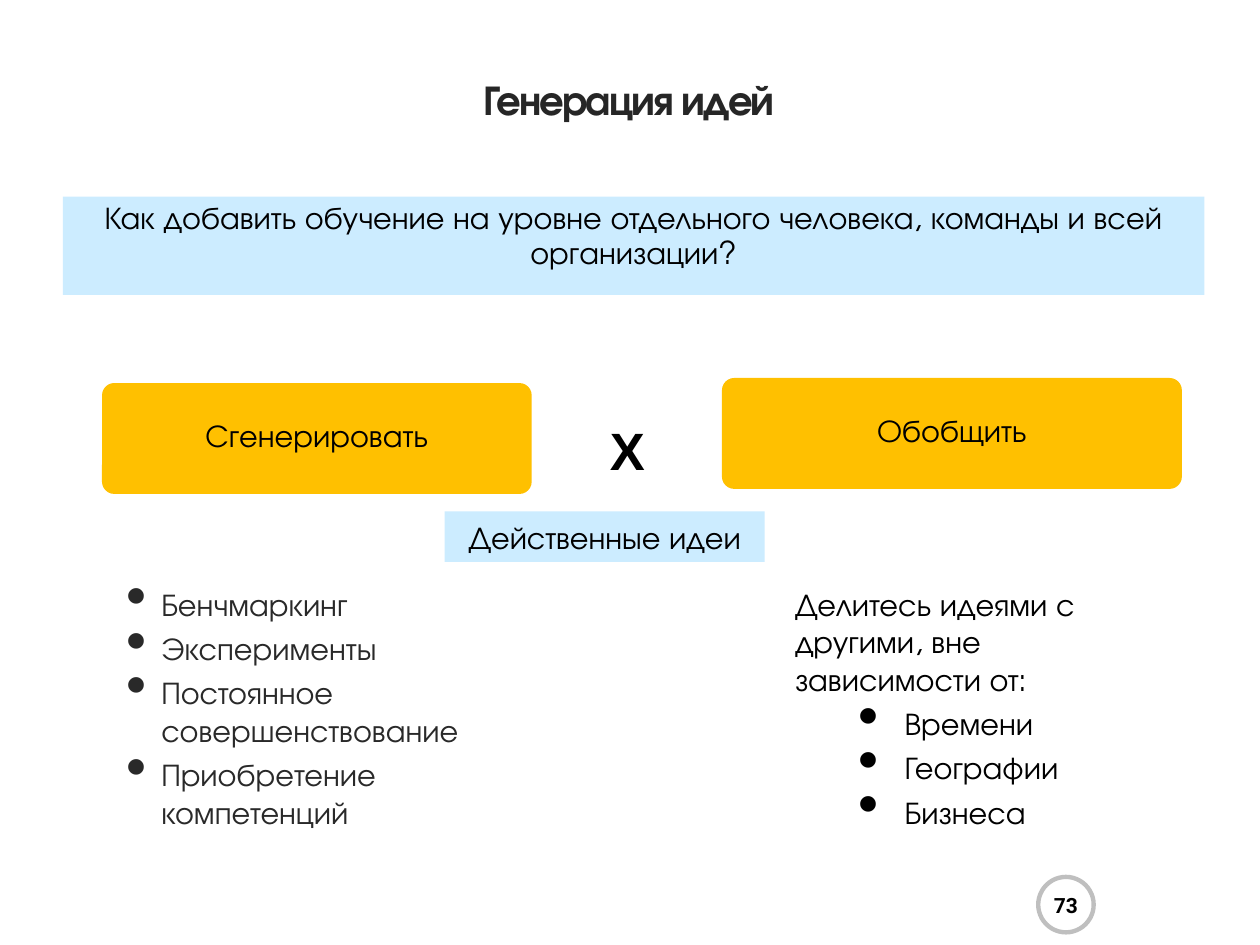
"""Build the slide on generating and sharing ideas."""
from dataclasses import dataclass

import lxml.etree
import pptx
import pptx.dml.color
import pptx.enum.shapes
import pptx.enum.text
import pptx.oxml.ns
import pptx.util

CELL = pptx.util.Inches(0.1)
COLS, ROWS = 100, 75
SANS = "TeX Gyre Adventor"
KIND = pptx.enum.shapes.MSO_SHAPE
ALIGN = pptx.enum.text.PP_ALIGN
ANCHOR = pptx.enum.text.MSO_ANCHOR
TOP, MID = ANCHOR.TOP, ANCHOR.MIDDLE


@dataclass(frozen=True)
class Area:
    """A place on the grid, in columns and rows."""
    col: float
    row: float
    wide: float
    high: float


@dataclass(frozen=True)
class Style:
    """The look of a paragraph."""
    color: str = "000000"
    size: float = 18
    face: str = SANS
    bold: bool = False
    align: ALIGN = ALIGN.CENTER


@dataclass(frozen=True)
class Panel:
    """A filled shape with one centred text."""
    kind: KIND
    area: Area
    fill: str
    text: str
    style: Style = Style()
    anchor: ANCHOR = MID
    inset: tuple = (0.4, 0, 0.4, 0.5)
    line: str = ""
    space: float = 1
    wrap: bool = True


@dataclass(frozen=True)
class Item:
    """A list entry, with a bullet when its hanging indent is not zero."""
    text: str
    left: float = 0
    hang: float = 0
    level: int = 0


def paint(hue: str) -> pptx.dml.color.RGBColor:
    """Turn a hex string into a colour."""
    return pptx.dml.color.RGBColor.from_string(hue)


def span(cells: float) -> int:
    """Turn grid cells into a length."""
    return round(cells * CELL)


def place(area: Area) -> tuple:
    """Give left, top, width and height of an area."""
    return tuple(map(span, (area.col, area.row, area.wide, area.high)))


def dress(para, text: str, style: Style) -> None:
    """Write a paragraph and set its look."""
    para.text = text
    para.alignment = style.align
    font = para.font
    font.name, font.size, font.bold = style.face, pptx.util.Pt(style.size), style.bold
    font.color.rgb = paint(style.color)


def frame(shape, inset: tuple, anchor: ANCHOR, wrap: bool = True):
    """Set the margins, anchor and wrap of a text frame."""
    body = shape.text_frame
    body.word_wrap = wrap
    body.auto_size = pptx.enum.text.MSO_AUTO_SIZE.NONE
    body.vertical_anchor = anchor
    (body.margin_left, body.margin_top,
     body.margin_right, body.margin_bottom) = map(span, inset)
    return body


def head(slide, text: str) -> None:
    """Place and format the title."""
    title = slide.shapes.title
    title.left, title.top, title.width, title.height = place(Area(7.2, 4.2, 85.5, 7.8))
    para = frame(title, (1, 0.5, 1, 0.5), MID).paragraphs[0]
    dress(para, text, Style("262626", 24, bold=True))
    para.line_spacing = pptx.util.Pt(25.1)
    para.runs[0]._r.get_or_add_rPr().set("spc", "-110")


def draw(slide, panel: Panel) -> None:
    """Draw a filled panel."""
    shape = slide.shapes.add_shape(panel.kind, *place(panel.area))
    shape.shadow.inherit = False
    shape.fill.solid()
    shape.fill.fore_color.rgb = paint(panel.fill)
    if panel.line:
        shape.line.color.rgb = paint(panel.line)
        shape.line.width = pptx.util.Pt(2.5)
    else:
        shape.line.fill.background()
    if panel.kind == KIND.ROUNDED_RECTANGLE:
        shape.adjustments[0] = 0.11
    para = frame(shape, panel.inset, panel.anchor, panel.wrap).paragraphs[0]
    dress(para, panel.text, panel.style)
    para.line_spacing = panel.space


def mark(para, item: Item) -> None:
    """Give a paragraph a large round bullet and a hanging indent."""
    props = para._p.get_or_add_pPr()
    props.set("marL", str(span(item.left)))
    props.set("indent", str(-span(item.hang)))
    for tag, key, value in (("a:buSzPct", "val", "190000"), ("a:buChar", "char", "•")):
        lxml.etree.SubElement(props, pptx.oxml.ns.qn(tag)).set(key, value)


def write(slide, area: Area, items: list, style: Style) -> None:
    """Write a list of items in a text box."""
    box = slide.shapes.add_textbox(*place(area))
    body = frame(box, (0, 0.4, 0, 0.4), TOP)
    for rank, item in enumerate(items):
        para = body.add_paragraph() if rank else body.paragraphs[0]
        para.level = item.level
        if item.hang:
            mark(para, item)
        dress(para, item.text, style)
        if rank:
            para.space_before = pptx.util.Pt(3.6)


def main() -> None:
    """Build and save the slide."""
    deck = pptx.Presentation()
    deck.slide_width, deck.slide_height = COLS * CELL, ROWS * CELL
    slide = deck.slides.add_slide(deck.slide_layouts[5])
    head(slide, "Генерация идей")

    sky, gold = "CCECFF", "FFC000"
    rect, rounded = KIND.RECTANGLE, KIND.ROUNDED_RECTANGLE
    panels = [
        Panel(KIND.OVAL, Area(82.4, 69.6, 4.4, 4.4), "FFFFFF", "73",
              Style(size=12, face="Roboto", bold=True), inset=(0, 0, 0, 0),
              line="BFBFBF", wrap=False),
        Panel(rounded, Area(8.1, 30.4, 34.1, 8.8), gold, "Сгенерировать"),
        Panel(rounded, Area(57.3, 30, 36.5, 8.8), gold, "Обобщить"),
        Panel(rect, Area(35.3, 40.6, 25.4, 4), sky, "Действенные идеи",
              inset=(0.4, 0.5, 0.4, 0.5), wrap=False),
        Panel(rect, Area(5, 15.6, 90.6, 7.8), sky,
              "Как добавить обучение на уровне отдельного человека, "
              "команды и всей организации?",
              anchor=TOP, inset=(1, 0.5, 1, 0.5), space=0.9),
    ]
    for panel in panels:
        draw(slide, panel)

    cross = slide.shapes.add_textbox(*place(Area(48, 32.7, 3.6, 6.1)))
    dress(frame(cross, (0.4, 0.5, 0.4, 0.5), TOP, False).paragraphs[0], "X",
          Style(size=30, face="Arial", bold=True))

    ways = ("Бенчмаркинг", "Эксперименты", "Постоянное совершенствование",
            "Приобретение компетенций")
    write(slide, Area(10, 46, 30.9, 20.8), [Item(way, 2.8, 2.8) for way in ways],
          Style("292929", align=ALIGN.LEFT))
    bounds = ("Времени", "Географии", "Бизнеса")
    write(slide, Area(63.1, 46, 26.9, 24.4),
          [Item("Делитесь идеями с другими, вне зависимости от:"),
           *(Item(bound, 8.7, 3.7, 1) for bound in bounds)],
          Style(align=ALIGN.LEFT))
    deck.save("out.pptx")


if __name__ == "__main__":
    main()
